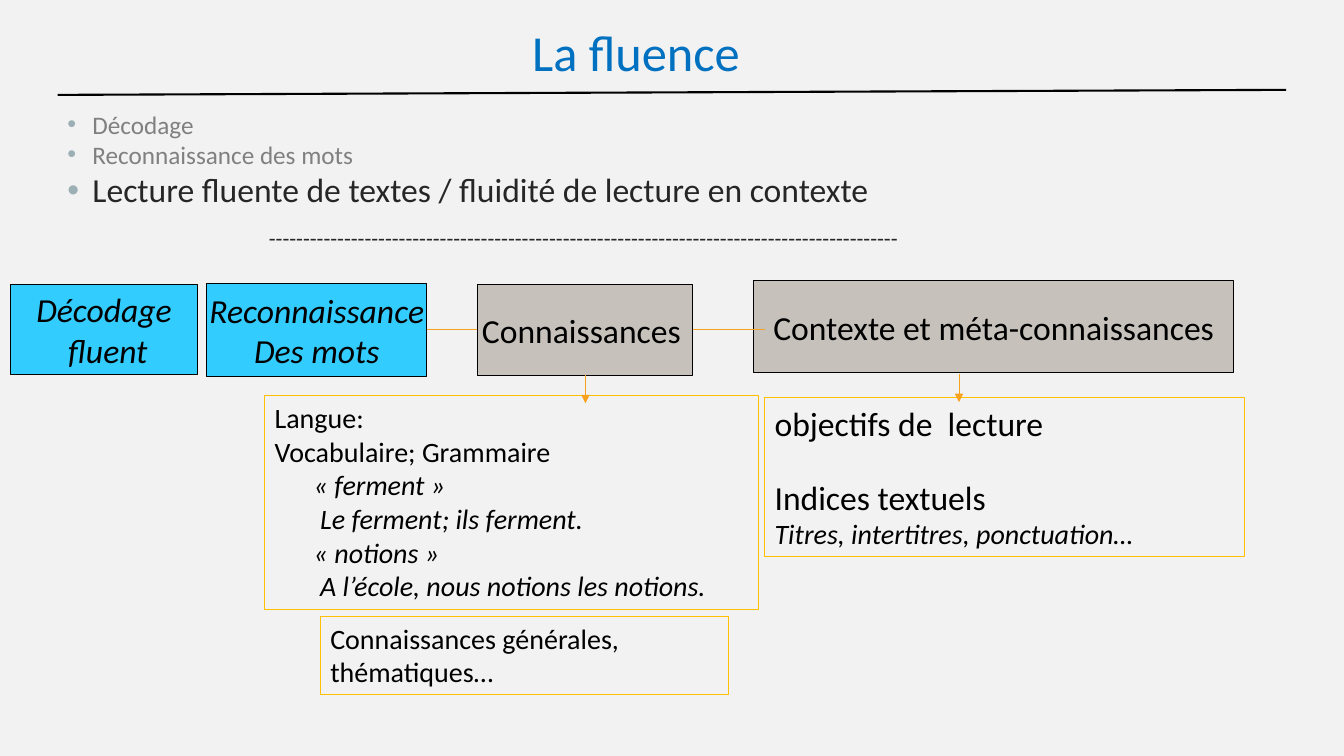
from dataclasses import dataclass

from lxml import etree
from pptx import Presentation
from pptx import util as u
from pptx.dml import color
from pptx.enum import shapes, text
from pptx.oxml import ns

CENTER, LEFT = text.PP_ALIGN.CENTER, text.PP_ALIGN.LEFT
MIDDLE, TOP = text.MSO_ANCHOR.MIDDLE, text.MSO_ANCHOR.TOP
BLACK, BLUE, TAUPE = "000000", "33CCFF", "C6C1BA"
GOLD, ORANGE, GREY, DARK = "FFC000", "F6A21D", "808080", "262626"


@dataclass(frozen=True)
class Line:
    words: str
    size: float = 24
    ink: str = BLACK
    italic: bool = False
    margin: float = 0
    before: float = 0
    spacing: float = 1
    bullet: bool = False


@dataclass(frozen=True)
class Box:
    left: float
    top: float
    width: float
    height: float
    lines: tuple[Line, ...]
    fill: str | None = None
    border: str | None = None
    align: text.PP_ALIGN = LEFT
    anchor: text.MSO_ANCHOR = TOP
    wrap: bool = True


@dataclass(frozen=True)
class Link:
    start: tuple[float, float]
    end: tuple[float, float]
    ink: str = ORANGE
    weight: float = 0.5
    arrow: bool = False


def rgb(code: str) -> color.RGBColor:
    return color.RGBColor.from_string(code)


def add_bullet(paragraph) -> None:
    properties = paragraph._p.get_or_add_pPr()
    properties.set("indent", str(u.Pt(-18)))
    tint = etree.SubElement(properties, ns.qn("a:buClr"))
    etree.SubElement(tint, ns.qn("a:srgbClr"), val="9BAFB5")
    etree.SubElement(properties, ns.qn("a:buFont"), typeface="Arial")
    etree.SubElement(properties, ns.qn("a:buChar"), char="•")


def write_line(paragraph, line: Line, align: text.PP_ALIGN) -> None:
    layout = {"alignment": align, "space_before": u.Pt(line.before), "line_spacing": line.spacing}
    for key, value in layout.items():
        setattr(paragraph, key, value)
    paragraph._p.get_or_add_pPr().set("marL", str(u.Pt(line.margin)))
    if line.bullet:
        add_bullet(paragraph)
    run = paragraph.add_run()
    run.text = line.words
    style = {"name": "Calibri", "size": u.Pt(line.size), "italic": line.italic}
    for key, value in style.items():
        setattr(run.font, key, value)
    run.font.color.rgb = rgb(line.ink)


def draw_box(slide, box: Box) -> None:
    place = [u.Pt(v) for v in (box.left, box.top, box.width, box.height)]
    if box.border:
        panel = slide.shapes.add_shape(shapes.MSO_SHAPE.RECTANGLE, *place)
        panel.shadow.inherit = False
        panel.line.color.rgb = rgb(box.border)
        panel.line.width = u.Pt(0.75)
        if box.fill:
            panel.fill.solid()
            panel.fill.fore_color.rgb = rgb(box.fill)
        else:
            panel.fill.background()
    else:
        panel = slide.shapes.add_textbox(*place)
    frame = panel.text_frame
    layout = {"word_wrap": box.wrap, "vertical_anchor": box.anchor, "auto_size": text.MSO_AUTO_SIZE.NONE}
    for key, value in layout.items():
        setattr(frame, key, value)
    for index, line in enumerate(box.lines):
        paragraph = frame.add_paragraph() if index else frame.paragraphs[0]
        write_line(paragraph, line, box.align)


def draw_link(slide, link: Link) -> None:
    ends = [u.Pt(v) for v in (*link.start, *link.end)]
    connector = slide.shapes.add_connector(shapes.MSO_CONNECTOR.STRAIGHT, *ends)
    connector.line.color.rgb = rgb(link.ink)
    connector.line.width = u.Pt(link.weight)
    if link.arrow:
        etree.SubElement(connector.line._get_or_add_ln(), ns.qn("a:tailEnd"), type="triangle")
    etree.SubElement(connector._element.spPr, ns.qn("a:effectLst"))


def step(left: float, top: float, width: float, height: float, fill: str, *words: str) -> Box:
    lines = tuple(Line(w, italic=fill == BLUE) for w in words)
    return Box(left, top, width, height, lines, fill, BLACK, CENTER, MIDDLE, False)


def example(words: str) -> Line:
    return Line(words, 20, italic=True, margin=28)


TITLE = Box(119.5, -0.7, 669.6, 80.6, (Line("La fluence", 36, "0070C0", spacing=0.9),),
            align=CENTER, anchor=MIDDLE)
OUTLINE = Box(41, 74.2, 828, 453.6, (
    Line("Décodage", 18, GREY, margin=18, bullet=True),
    Line("Reconnaissance des mots", 18, GREY, margin=18, bullet=True),
    Line("Lecture fluente de textes / fluidité de lecture en contexte", 24, DARK, margin=18, bullet=True),
    Line("-" * 92, 16, DARK, margin=144, before=10),
))
STEPS = (
    step(7.6, 203.5, 133.5, 64, BLUE, "Décodage", " fluent"),
    step(147.6, 202.4, 157.4, 66.4, BLUE, "Reconnaissance", "Des mots"),
    step(538.3, 200.6, 342.9, 65.6, TAUPE, "Contexte et méta-connaissances"),
    step(341, 203.2, 154, 65, TAUPE, "Connaissances "),
)
DETAILS = (
    Box(189, 282.6, 353, 152.6, (
        Line("Langue:", 20),
        Line("Vocabulaire; Grammaire", 20),
        example("« ferment »"),
        example(" Le ferment; ils ferment."),
        example("« notions »"),
        example(" A l’école, nous notions les notions."),
    ), border=GOLD),
    Box(228.8, 440.2, 291.6, 55.7, (Line("Connaissances générales, thématiques…", 20),), border=GOLD),
    Box(546.2, 284, 342.9, 113.6, (
        Line("objectifs de  lecture"),
        Line("Indices textuels", before=24),
        Line("Titres, intertitres, ponctuation…", 20, italic=True),
    ), border=GOLD),
)
LINKS = (
    Link((41.2, 67.8), (918.7, 64.2), BLACK, 1.5),
    Link((418.2, 267.8), (418.2, 288), arrow=True),
    Link((685, 267), (685, 287.2), arrow=True),
    Link((305, 235.6), (341, 235.6)),
    Link((495, 235.6), (546.5, 235.6)),
)


def main() -> None:
    deck = Presentation()
    deck.slide_width, deck.slide_height = u.Pt(960), u.Pt(540)
    slide = deck.slides.add_slide(deck.slide_layouts[6])
    slide.background.fill.solid()
    slide.background.fill.fore_color.rgb = rgb("F2F2F2")
    for box in (TITLE, OUTLINE, *STEPS, *DETAILS):
        draw_box(slide, box)
    for link in LINKS:
        draw_link(slide, link)
    deck.save("out.pptx")


if __name__ == "__main__":
    main()
